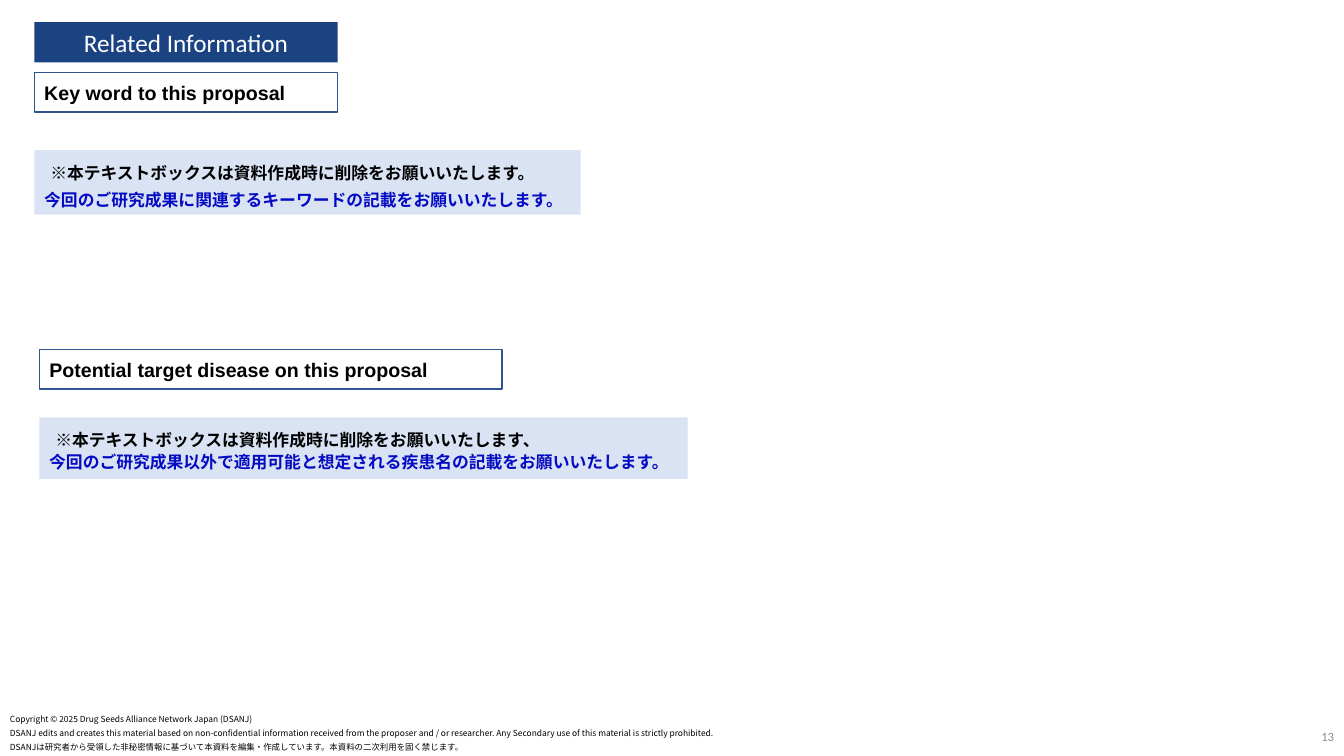
import pptx
import pptx.util
import pptx.dml.color
import pptx.enum.shapes
import pptx.enum.text
import pptx.oxml
import pptx.oxml.ns

Inches = pptx.util.Inches
Pt = pptx.util.Pt
Align = pptx.enum.text.PP_ALIGN
Anchor = pptx.enum.text.MSO_ANCHOR

theme = {
    "colors": {"navy": "1B4281", "outline": "325491", "pale": "DAE3F3", "blue": "040BC2",
               "gray": "898989", "black": "000000", "white": "FFFFFF"},
    "sizes": {"title": 18, "heading": 14, "note": 12, "number": 9, "footer": 6},
    "fonts": {"title": "Calibri", "heading": "Arial", "note": "Arial", "number": "Calibri",
              "footer": "Noto Sans CJK JP"},
    "east_asian": "Noto Sans CJK JP",
}


def color(name):
    return pptx.dml.color.RGBColor.from_string(theme["colors"][name])


def write(shape, role, lines, anchor=Anchor.TOP, align=Align.LEFT, bold=False):
    frame = shape.text_frame
    frame_format = {"word_wrap": True, "vertical_anchor": anchor,
                    "auto_size": pptx.enum.text.MSO_AUTO_SIZE.NONE,
                    "margin_left": Inches(0.1), "margin_right": Inches(0.1),
                    "margin_top": Inches(0.05), "margin_bottom": Inches(0.05)}
    for name, value in frame_format.items():
        setattr(frame, name, value)
    for index, (text, tint, spacing, indent) in enumerate(lines):
        para = frame.paragraphs[0] if index == 0 else frame.add_paragraph()
        para.alignment = align
        if spacing:
            para.line_spacing = Pt(spacing)
        if indent:
            para._p.get_or_add_pPr().set("indent", str(Inches(indent)))
        span = para.add_run()
        span.text = text
        span_format = {"name": theme["fonts"][role], "size": Pt(theme["sizes"][role]), "bold": bold}
        for name, value in span_format.items():
            setattr(span.font, name, value)
        span.font.color.rgb = color(tint)
        east_asian = pptx.oxml.parse_xml(
            f'<a:ea {pptx.oxml.ns.nsdecls("a")} typeface="{theme["east_asian"]}"/>')
        span.font._element.find(pptx.oxml.ns.qn("a:latin")).addnext(east_asian)


deck = pptx.Presentation()
deck.slide_width = Inches(13.33)
deck.slide_height = Inches(7.5)
page = deck.slides.add_slide(deck.slide_layouts[5])

title = page.shapes.title
title_place = {"left": 0.34, "top": 0.22, "width": 3.01, "height": 0.4}
for name, value in title_place.items():
    setattr(title, name, Inches(value))
title.fill.solid()
title.fill.fore_color.rgb = color("navy")
write(title, "title", [("Related Information", "white", None, 0)], Anchor.MIDDLE, Align.CENTER)

headings = [
    ("Key word to this proposal", 0.34, 0.72, 3.01),
    ("Potential target disease on this proposal", 0.39, 3.47, 4.59),
]
for text, left, top, width in headings:
    box = page.shapes.add_shape(pptx.enum.shapes.MSO_SHAPE.RECTANGLE,
                                Inches(left), Inches(top), Inches(width), Inches(0.39))
    box.shadow.inherit = False
    box.fill.background()
    box.line.color.rgb = color("outline")
    box.line.width = Pt(1)
    write(box, "heading", [(text, "black", None, 0)], Anchor.MIDDLE, bold=True)

notes = [
    ("※本テキストボックスは資料作成時に削除をお願いいたします。",
     "今回のご研究成果に関連するキーワードの記載をお願いいたします。", 19.5, 0.34, 1.49, 5.42, 0.64),
    ("※本テキストボックスは資料作成時に削除をお願いいたします、",
     "今回のご研究成果以外で適用可能と想定される疾患名の記載をお願いいたします。", 15.7, 0.39, 4.14, 6.43, 0.61),
]
for reminder, request, spacing, left, top, width, height in notes:
    box = page.shapes.add_shape(pptx.enum.shapes.MSO_SHAPE.RECTANGLE,
                                Inches(left), Inches(top), Inches(width), Inches(height))
    box.shadow.inherit = False
    box.fill.solid()
    box.fill.fore_color.rgb = color("pale")
    box.line.fill.background()
    write(box, "note", [(reminder, "black", 19.5, 0.06), (request, "blue", spacing, 0)], bold=True)

footers = [
    ("Copyright © 2025 Drug Seeds Alliance Network Japan (DSANJ)", 7.04, 2.81, None),
    ("DSANJ edits and creates this material based on non-confidential information received from the "
     "proposer and / or researcher. Any Secondary use of this material is strictly prohibited.",
     7.17, 7.72, 7.2),
    ("DSANJは研究者から受領した非秘密情報に基づいて本資料を編集・作成しています。本資料の二次利用を固く禁じます。",
     7.31, 5.55, 7.2),
]
for text, top, width, spacing in footers:
    box = page.shapes.add_textbox(0, Inches(top), Inches(width), Inches(0.2))
    write(box, "footer", [(text, "black", spacing, 0)])

number = page.shapes.add_textbox(Inches(11), Inches(7.12), Inches(2.33), Inches(0.37))
write(number, "number", [("13", "gray", None, 0)], Anchor.MIDDLE, Align.RIGHT)

deck.save("out.pptx")
